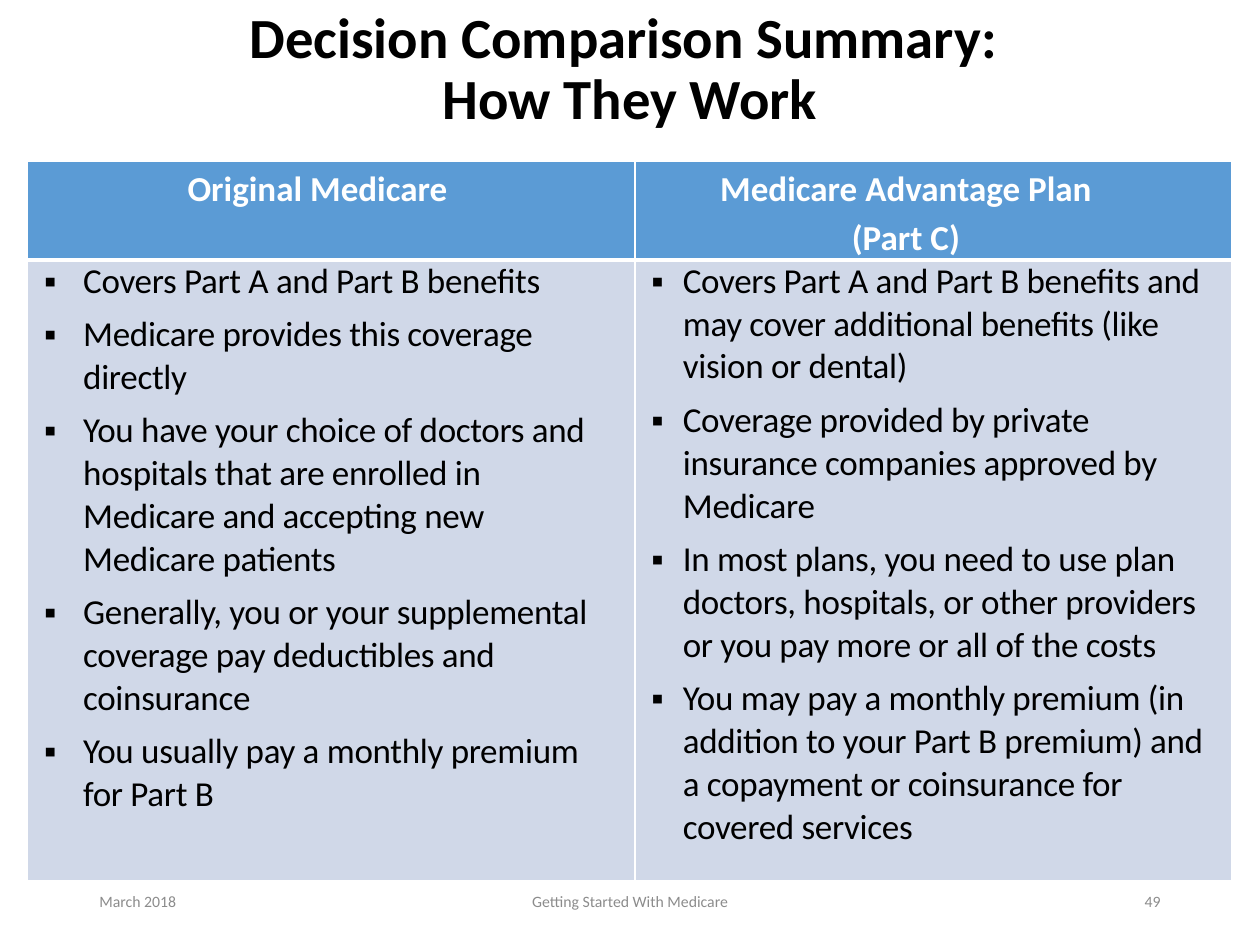
from lxml import etree
from pptx import Presentation
from pptx.dml.color import RGBColor
from pptx.enum.text import MSO_ANCHOR, PP_ALIGN
from pptx.oxml.ns import qn
from pptx.util import Inches, Pt

LEFT, CENTER, RIGHT = PP_ALIGN.LEFT, PP_ALIGN.CENTER, PP_ALIGN.RIGHT
MIDDLE = MSO_ANCHOR.MIDDLE
FONT = "Calibri"
BLACK, WHITE, GRAY = "000000", "FFFFFF", "8C8C8C"
HEADER_FILL, BODY_FILL = "5B9BD5", "D0D8E8"
TITLE_ONLY = 5

COLUMNS = [
    {
        "heading": "Original Medicare",
        "width": 4.82,
        "heading_indent": 0.07,
        "heading_right": 0.29,
        "bullet_indent": (0.44, -0.31),
        "body_right": 0.2,
        "points": [
            "Covers Part A and Part B benefits",
            "Medicare provides this coverage directly",
            "You have your choice of doctors and hospitals that are enrolled in "
            "Medicare and accepting new Medicare patients",
            "Generally, you or your supplemental coverage pay deductibles and coinsurance",
            "You usually pay a monthly premium for Part B",
        ],
    },
    {
        "heading": "Medicare Advantage Plan (Part C)",
        "width": 4.74,
        "heading_indent": 0.38,
        "heading_right": 0.82,
        "bullet_indent": (0.38, -0.25),
        "body_right": 0.15,
        "points": [
            "Covers Part A and Part B benefits and may cover additional benefits "
            "(like vision or dental)",
            "Coverage provided by private insurance companies approved by Medicare",
            "In most plans, you need to use plan doctors, hospitals, or other "
            "providers or you pay more or all of the costs",
            "You may pay a monthly premium (in addition to your Part B premium) "
            "and a copayment or coinsurance for covered services",
        ],
    },
]

FOOTERS = [
    ("March 2018", 0.69, 2.25, LEFT),
    ("Getting Started With Medicare", 3.31, 3.38, CENTER),
    ("49", 7.06, 2.25, RIGHT),
]


def rgb(color):
    return RGBColor.from_string(color)


def style_runs(paragraph, size, color, bold=False, spacing=0):
    """Format every run; spacing is the letter spacing in points."""
    for run in paragraph.runs:
        run.font.name = FONT
        run.font.size = Pt(size)
        run.font.bold = bold
        run.font.color.rgb = rgb(color)
        if spacing:
            run._r.get_or_add_rPr().set("spc", str(round(spacing * 100)))


def set_indent(paragraph, left, first_line=0):
    properties = paragraph._p.get_or_add_pPr()
    properties.set("marL", str(Inches(left)))
    properties.set("indent", str(Inches(first_line)))


def add_bullet(paragraph):
    properties = paragraph._p.get_or_add_pPr()
    etree.SubElement(properties, qn("a:buFont")).set("typeface", "Arial")
    etree.SubElement(properties, qn("a:buChar")).set("char", "▪")


def add_borders(cell, top, bottom):
    """Draw white cell edges; top and bottom are widths in points."""
    properties = cell._tc.get_or_add_tcPr()
    for side, width in (("L", 1), ("R", 1), ("T", top), ("B", bottom)):
        line = etree.SubElement(properties, qn(f"a:ln{side}"), w=str(Pt(width)))
        fill = etree.SubElement(line, qn("a:solidFill"))
        etree.SubElement(fill, qn("a:srgbClr"), val=WHITE)


def prepare_cell(cell, fill, right_margin, top=1, bottom=1):
    add_borders(cell, top, bottom)
    cell.fill.solid()
    cell.fill.fore_color.rgb = rgb(fill)
    cell.margin_left = cell.margin_top = cell.margin_bottom = 0
    cell.margin_right = Inches(right_margin)


def fill_heading(cell, column):
    prepare_cell(cell, HEADER_FILL, column["heading_right"], bottom=3)
    paragraph = cell.text_frame.paragraphs[0]
    paragraph.text = column["heading"]
    paragraph.alignment = CENTER
    paragraph.line_spacing = 1.15
    set_indent(paragraph, column["heading_indent"])
    style_runs(paragraph, 20, WHITE, bold=True)


def fill_points(cell, column):
    prepare_cell(cell, BODY_FILL, column["body_right"], top=3)
    frame = cell.text_frame
    for index, point in enumerate(column["points"]):
        paragraph = frame.add_paragraph() if index else frame.paragraphs[0]
        paragraph.text = point
        paragraph.space_before = Pt(6 if index else 0)
        set_indent(paragraph, *column["bullet_indent"])
        add_bullet(paragraph)
        style_runs(paragraph, 20, BLACK, spacing=-0.2)


def add_title(slide):
    title = slide.shapes.title
    title.left, title.top = Inches(0.69), Inches(0)
    title.width, title.height = Inches(8.62), Inches(1.12)
    title.text_frame.vertical_anchor = MIDDLE
    paragraph = title.text_frame.paragraphs[0]
    paragraph.text = "Decision Comparison Summary: \vHow They Work"
    paragraph.alignment = CENTER
    paragraph.line_spacing = 0.9
    style_runs(paragraph, 32.4, BLACK, bold=True)


def add_comparison(slide):
    table = slide.shapes.add_table(
        2, len(COLUMNS), Inches(0.22), Inches(1.28), Inches(9.56), Inches(5.67)
    ).table
    table.rows[0].height = Inches(0.74)
    table.rows[1].height = Inches(4.93)
    for index, column in enumerate(COLUMNS):
        table.columns[index].width = Inches(column["width"])
        fill_heading(table.cell(0, index), column)
        fill_points(table.cell(1, index), column)


def add_footer(slide, text, left, width, alignment):
    box = slide.shapes.add_textbox(Inches(left), Inches(6.95), Inches(width), Inches(0.4))
    frame = box.text_frame
    frame.word_wrap = True
    frame.vertical_anchor = MIDDLE
    paragraph = frame.paragraphs[0]
    paragraph.text = text
    paragraph.alignment = alignment
    style_runs(paragraph, 9, GRAY)


def main():
    presentation = Presentation()
    presentation.slide_width, presentation.slide_height = Inches(10), Inches(7.5)
    slide = presentation.slides.add_slide(presentation.slide_layouts[TITLE_ONLY])
    add_title(slide)
    add_comparison(slide)
    for footer in FOOTERS:
        add_footer(slide, *footer)
    presentation.save("out.pptx")


if __name__ == "__main__":
    main()
